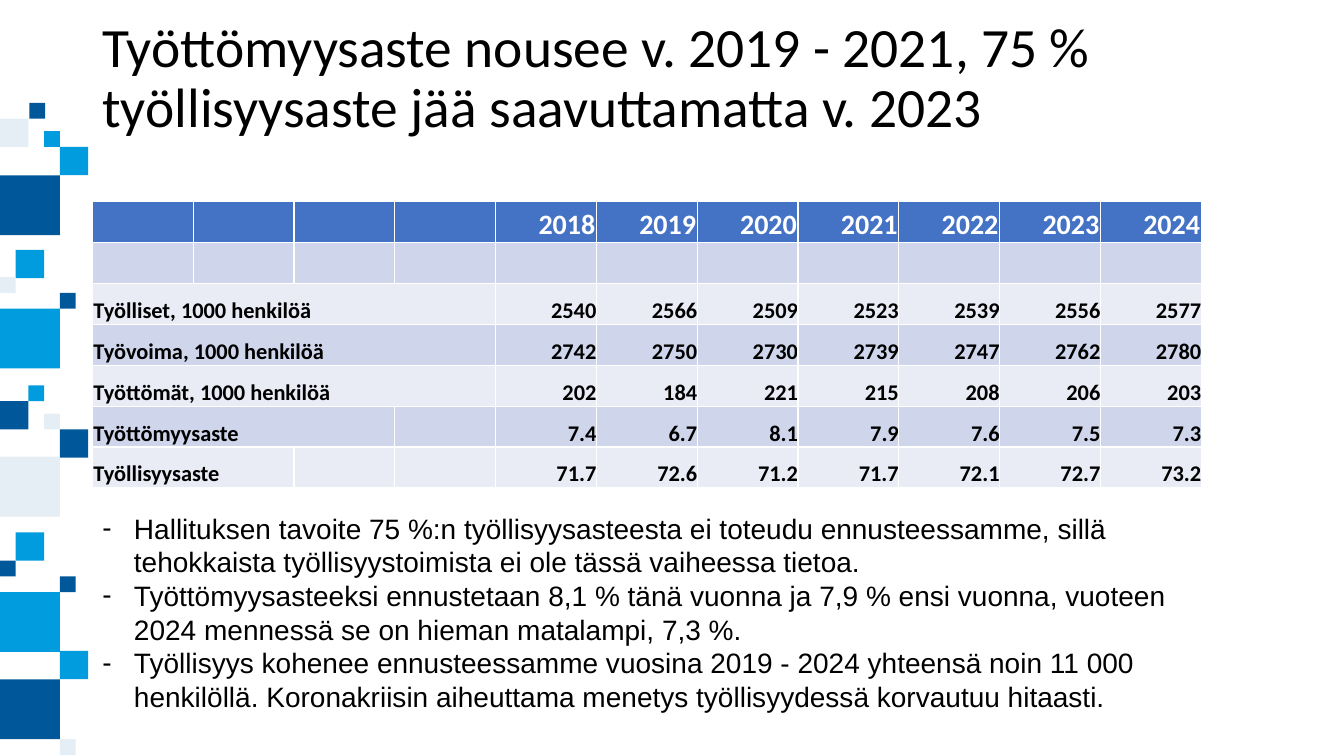
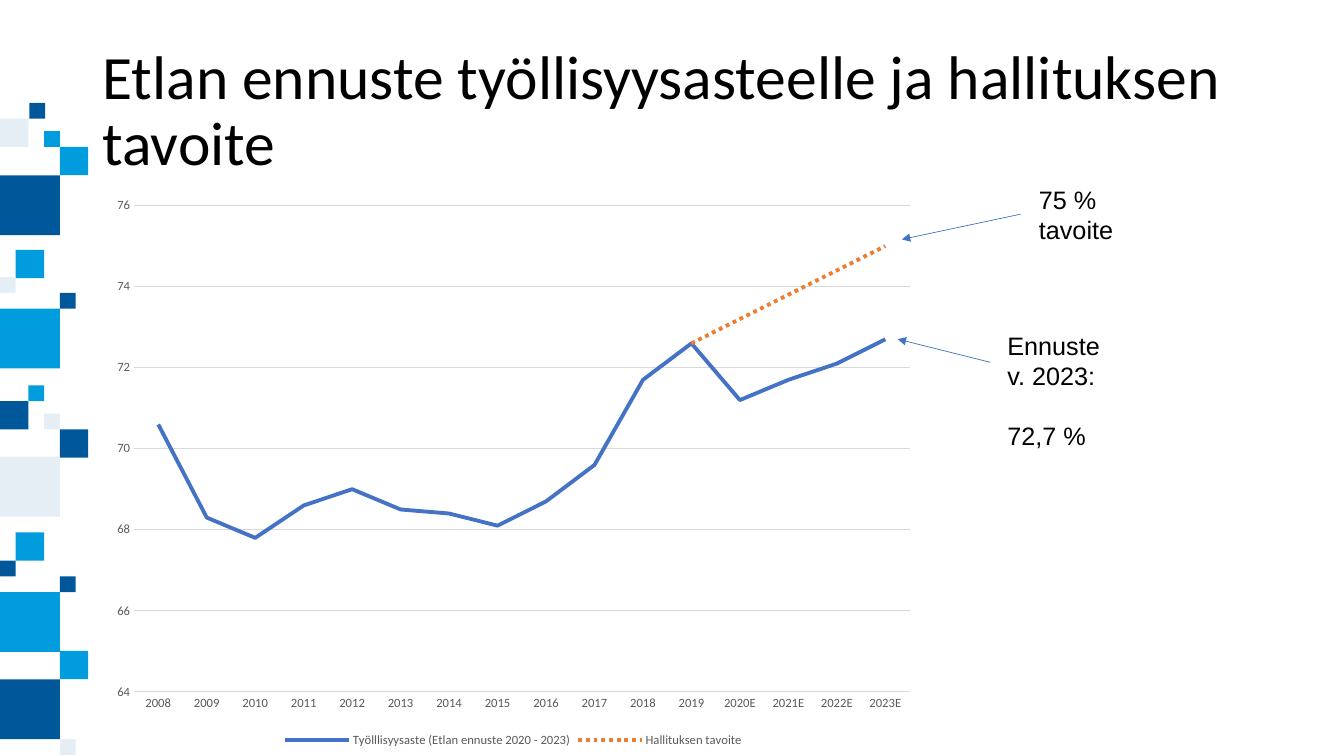
import lxml.etree
import pptx
import pptx.chart.data
import pptx.dml.color
import pptx.enum.chart
import pptx.enum.dml
import pptx.enum.shapes
import pptx.enum.text
import pptx.oxml.ns
import pptx.util


class Theme:
    """Colours, fonts and type sizes shared by the slides."""
    navy, sky, mist = (pptx.dml.color.RGBColor.from_string(c) for c in ("00589A", "009CDD", "E5EEF5"))
    blue, orange = (pptx.dml.color.RGBColor.from_string(c) for c in ("4472C4", "ED7D31"))
    band_dark, band_light = (pptx.dml.color.RGBColor.from_string(c) for c in ("CFD5EA", "E9EBF5"))
    black, white = (pptx.dml.color.RGBColor.from_string(c) for c in ("000000", "FFFFFF"))
    grid, label = (pptx.dml.color.RGBColor.from_string(c) for c in ("D9D9D9", "595959"))
    heading_font, body_font = "Calibri", "Arial"
    title, title_small, list, note = 44, 39.6, 20, 18
    table_head, table_body, chart = 20, 16, 9


def px(*lengths):
    """Turn px lengths into EMU, 96 px to the inch."""
    emus = [pptx.util.Emu(length * 9525) for length in lengths]
    return emus if len(emus) > 1 else emus[0]


def set_font(font, name, size, color=Theme.black, bold=False):
    font.name, font.size, font.bold = name, pptx.util.Pt(size), bold
    font.color.rgb = color


qn = pptx.oxml.ns.qn
align = pptx.enum.text.PP_ALIGN
anchor = pptx.enum.text.MSO_ANCHOR

presentation = pptx.Presentation()
presentation.slide_width, presentation.slide_height = px(1280, 720)
table_slide = presentation.slides.add_slide(presentation.slide_layouts[1])
chart_slide = presentation.slides.add_slide(presentation.slide_layouts[5])

# Mosaic band on the master: left, top, width, height, colour
small, medium, large = 15, 27, 57
mosaic = [
    (28, 98, small, Theme.navy), (0, 113, medium, Theme.mist),
    (42, 125, small, Theme.sky), (large, 140, medium, Theme.sky),
    (0, 167, large, Theme.navy),
    (15, 238, medium, Theme.sky), (0, 264, small, Theme.mist),
    (large, 279, small, Theme.navy), (0, 294, large, Theme.sky),
    (27, 367, small, Theme.sky), (0, 382, medium, Theme.navy),
    (42, 394, small, Theme.mist), (large, 409, medium, Theme.navy),
    (0, 435, large, Theme.mist),
    (15, 507, medium, Theme.sky), (0, 534, small, Theme.navy),
    (large, 549, small, Theme.navy), (0, 564, large, Theme.sky),
    (large, 620, medium, Theme.sky), (0, 647, large, Theme.navy),
    (large, 704, small, Theme.mist),
]
master_tree = presentation.slide_master.element.cSld.spTree
for number, (left, top, side, color) in enumerate(mosaic, start=1):
    tile = table_slide.shapes.add_shape(
        pptx.enum.shapes.MSO_SHAPE.RECTANGLE, *px(left, top, side, side))
    tile.name = f"Mosaic tile {number}"
    tile.shadow.inherit = False
    tile.fill.solid()
    tile.fill.fore_color.rgb = color
    tile.line.fill.background()
    tile.element.nvSpPr.cNvPr.set("id", str(100 + number))
    master_tree.append(tile.element)

# Titles
titles = [
    (table_slide, 35, Theme.title_small, 62,
     "Työttömyysaste nousee v. 2019 - 2021, 75 % työllisyysaste jää saavuttamatta v. 2023"),
    (chart_slide, 38, Theme.title, 5,
     "Etlan ennuste työllisyysasteelle ja hallituksen tavoite"),
]
for slide, top, size, bottom_margin, text in titles:
    title = slide.shapes.title
    title.left, title.top, title.width, title.height = px(88, top, 1104, 139)
    frame = title.text_frame
    frame.text = text
    frame.auto_size = pptx.enum.text.MSO_AUTO_SIZE.NONE
    frame.vertical_anchor = anchor.MIDDLE
    frame.margin_bottom = px(bottom_margin)
    paragraph = frame.paragraphs[0]
    paragraph.alignment = align.LEFT
    paragraph.line_spacing = 0.9
    set_font(paragraph.font, Theme.heading_font, size)

# Employment table: label, columns the label spans, values
label_columns = 4
rows = [
    ("", 1, ["2018", "2019", "2020", "2021", "2022", "2023", "2024"]),
    ("", 1, [""] * 7),
    ("Työlliset, 1000 henkilöä", 4, ["2540", "2566", "2509", "2523", "2539", "2556", "2577"]),
    ("Työvoima, 1000 henkilöä", 4, ["2742", "2750", "2730", "2739", "2747", "2762", "2780"]),
    ("Työttömät, 1000 henkilöä", 4, ["202", "184", "221", "215", "208", "206", "203"]),
    ("Työttömyysaste", 3, ["7.4", "6.7", "8.1", "7.9", "7.6", "7.5", "7.3"]),
    ("Työllisyysaste", 2, ["71.7", "72.6", "71.2", "71.7", "72.1", "72.7", "73.2"]),
]
column_count = label_columns + 7
table = table_slide.shapes.add_table(
    len(rows), column_count, *px(88, 192, 96 * column_count, 39 * len(rows))).table
for row, (label, span, values) in enumerate(rows):
    texts = [label] + [""] * (label_columns - 1) + values
    header = row == 0
    fill = Theme.blue if header else (Theme.band_dark if row % 2 else Theme.band_light)
    for column, text in enumerate(texts):
        cell = table.cell(row, column)
        cell.fill.solid()
        cell.fill.fore_color.rgb = fill
        if not text:
            continue
        cell.text = text
        cell.vertical_anchor = anchor.BOTTOM
        margin = px(1 if header or column == 0 else 0)
        cell.margin_left = cell.margin_right = cell.margin_top = margin
        cell.margin_bottom = 0
        paragraph = cell.text_frame.paragraphs[0]
        paragraph.alignment = align.RIGHT if column else align.LEFT
        set_font(paragraph.font, Theme.heading_font,
                 Theme.table_head if header else Theme.table_body,
                 Theme.white if header else Theme.black, bold=True)
    if span > 1:
        table.cell(row, 0).merge(table.cell(row, span - 1))

# Conclusions under the table
conclusions = [
    "Hallituksen tavoite 75 %:n työllisyysasteesta ei toteudu ennusteessamme, sillä "
    "tehokkaista työllisyystoimista ei ole tässä vaiheessa tietoa.",
    "Työttömyysasteeksi ennustetaan 8,1 % tänä vuonna ja 7,9 % ensi vuonna, vuoteen "
    "2024 mennessä se on hieman matalampi, 7,3 %.",
    "Työllisyys kohenee ennusteessamme vuosina 2019 - 2024 yhteensä noin 11 000 "
    "henkilöllä. Koronakriisin aiheuttama menetys työllisyydessä korvautuu hitaasti.",
]
body = table_slide.placeholders[1]
body.left, body.top, body.width, body.height = px(88, 482, 1059, 204)
frame = body.text_frame
frame.text = "\n".join(conclusions)
frame.auto_size = pptx.enum.text.MSO_AUTO_SIZE.NONE
for paragraph in frame.paragraphs:
    paragraph.space_before = pptx.util.Pt(0)
    properties = paragraph._p.get_or_add_pPr()
    properties.set("marL", str(px(30)))
    properties.set("indent", str(px(-30)))
    lxml.etree.SubElement(properties, qn("a:buChar"), char="-")
    set_font(paragraph.font, Theme.body_font, Theme.list)

# Employment rate chart
forecast = [70.6, 68.3, 67.8, 68.6, 69.0, 68.5, 68.4, 68.1,
            68.7, 69.6, 71.7, 72.6, 71.2, 71.7, 72.1, 72.7]
target = [None] * 11 + [72.6, 73.2, 73.8, 74.4, 75.0]
chart_data = pptx.chart.data.CategoryChartData()
chart_data.categories = [f"{year}E" if year > 2019 else str(year) for year in range(2008, 2024)]
chart_data.add_series("Työlllisyysaste (Etlan ennuste 2020 - 2023)", forecast)
chart_data.add_series("Hallituksen tavoite", target)
chart = chart_slide.shapes.add_chart(
    pptx.enum.chart.XL_CHART_TYPE.LINE, *px(96, 178, 786, 538), chart_data).chart
chart.has_title = False
set_font(chart.font, Theme.heading_font, Theme.chart, Theme.label)
chart.has_legend = True
chart.legend.position = pptx.enum.chart.XL_LEGEND_POSITION.BOTTOM
chart.legend.include_in_layout = False
set_font(chart.legend.font, Theme.heading_font, Theme.chart, Theme.label)

plot = chart.plots[0]
plot.vary_by_categories = False
for series, color in zip(plot.series, (Theme.blue, Theme.orange)):
    series.smooth = False
    series.format.line.width = pptx.util.Pt(2.75)
    series.format.line.color.rgb = color
plot.series[1].format.line.dash_style = pptx.enum.dml.MSO_LINE.ROUND_DOT

value_axis, category_axis = chart.value_axis, chart.category_axis
value_axis.minimum_scale, value_axis.maximum_scale, value_axis.major_unit = 64, 76, 2
value_axis.tick_labels.number_format = "0"
value_axis.tick_labels.number_format_is_linked = False
value_axis.format.line.fill.background()
for axis in (value_axis, category_axis):
    axis.major_tick_mark = axis.minor_tick_mark = pptx.enum.chart.XL_TICK_MARK.NONE
    set_font(axis.tick_labels.font, Theme.heading_font, Theme.chart, Theme.label)
for line in (value_axis.major_gridlines.format.line, category_axis.format.line):
    line.width = pptx.util.Pt(0.75)
    line.color.rgb = Theme.grid

# Notes beside the chart: box, paragraphs, gap between them in points, arrow
notes = [
    ((980, 171, 98, 68), ["75 %", "tavoite"], 0, (972, 204, 859, 228)),
    ((950, 310, 125, 126), ["Ennuste v. 2023:", "72,7 %"], 21, (943, 345, 855, 323)),
]
for box, texts, gap, arrow_ends in notes:
    frame = chart_slide.shapes.add_textbox(*px(*box)).text_frame
    frame.word_wrap = True
    frame.text = "\n".join(texts)
    for paragraph in frame.paragraphs:
        set_font(paragraph.font, Theme.body_font, Theme.note)
    frame.paragraphs[1].space_before = pptx.util.Pt(gap)

    arrow = chart_slide.shapes.add_connector(
        pptx.enum.shapes.MSO_CONNECTOR.STRAIGHT, *px(*arrow_ends))
    arrow.line.width = pptx.util.Pt(0.5)
    arrow.line.color.rgb = Theme.blue
    lxml.etree.SubElement(arrow.line._get_or_add_ln(), qn("a:tailEnd"), type="triangle")
    lxml.etree.SubElement(arrow.element.spPr, qn("a:effectLst"))

presentation.save("out.pptx")
